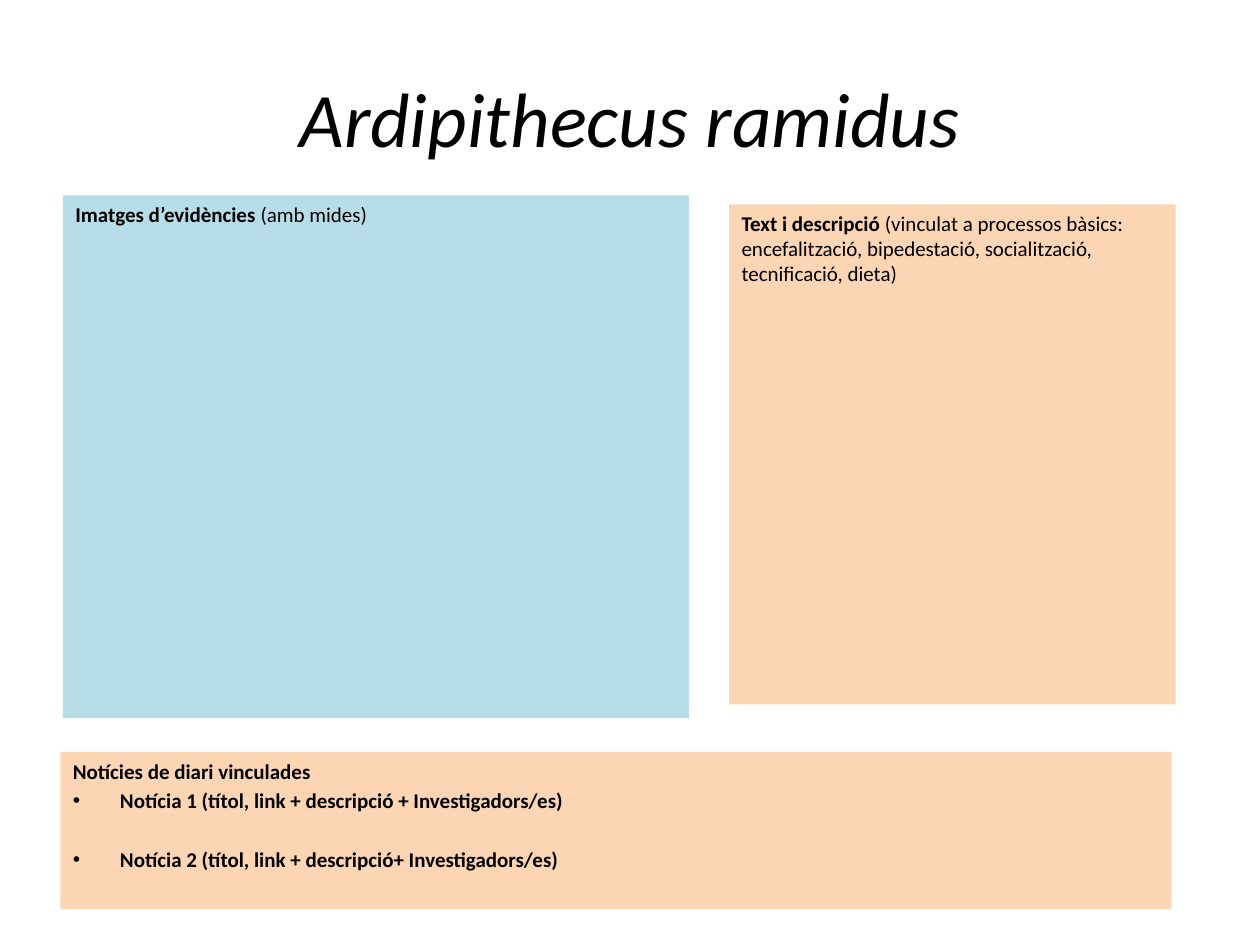
from lxml.etree import SubElement
from pptx import Presentation
from pptx.dml.color import RGBColor
from pptx.enum.shapes import MSO_SHAPE
from pptx.enum.text import MSO_ANCHOR, PP_ALIGN
from pptx.oxml.ns import qn
from pptx.util import Cm, Pt

BLACK = RGBColor(0x00, 0x00, 0x00)
LIGHT_BLUE = RGBColor(0xB7, 0xDE, 0xE8)
PEACH = RGBColor(0xFC, 0xD5, 0xB5)
FONT = "Calibri"
TITLE_ONLY = 5


def place(shape, left, top, width, height):
    shape.left, shape.top = Cm(left), Cm(top)
    shape.width, shape.height = Cm(width), Cm(height)


def style_font(paragraph, size):
    paragraph.font.name = FONT
    paragraph.font.size = Pt(size)
    paragraph.font.color.rgb = BLACK


def set_title(slide, species):
    title = slide.shapes.title
    place(title, 1.27, 0.76, 22.86, 3.18)
    title.text_frame.vertical_anchor = MSO_ANCHOR.MIDDLE
    heading = title.text_frame.paragraphs[0]
    heading.text = species
    heading.alignment = PP_ALIGN.CENTER
    style_font(heading, 44)
    heading.font.italic = True


def add_panel(slide, bounds, color, label, hint=""):
    """Add a filled box with a bold label and an optional plain hint; return its text frame."""
    panel = slide.shapes.add_shape(MSO_SHAPE.RECTANGLE, *map(Cm, bounds))
    panel.shadow.inherit = False
    panel.fill.solid()
    panel.fill.fore_color.rgb = color
    panel.line.fill.background()
    frame = panel.text_frame
    frame.word_wrap = True
    frame.vertical_anchor = MSO_ANCHOR.TOP
    heading = frame.paragraphs[0]
    heading.alignment = PP_ALIGN.LEFT
    style_font(heading, 12)
    for text, bold in ((label, True), (hint, False)):
        if text:
            run = heading.add_run()
            run.text = text
            run.font.bold = bold
    return frame


def add_bullet(frame, text, space_before):
    item = frame.add_paragraph()
    item.text = text
    item.alignment = PP_ALIGN.LEFT
    item.space_before = Pt(space_before)
    style_font(item, 12)
    item.font.bold = True
    properties = item._p.get_or_add_pPr()
    indent = Cm(0.95)
    properties.set("marL", str(indent))
    properties.set("indent", str(-indent))
    SubElement(properties, qn("a:buFont"), typeface="Arial")
    SubElement(properties, qn("a:buChar"), char="•")
    # The schema wants the default run properties after the bullet.
    properties.append(properties.find(qn("a:defRPr")))


def main():
    presentation = Presentation()
    presentation.slide_width, presentation.slide_height = Cm(25.4), Cm(19.05)
    slide = presentation.slides.add_slide(presentation.slide_layouts[TITLE_ONLY])

    set_title(slide, "Ardipithecus ramidus")
    add_panel(slide, (1.27, 3.94, 12.62, 10.54), LIGHT_BLUE,
              "Imatges d’evidències ", "(amb mides)")
    add_panel(slide, (14.7, 4.12, 9, 10.08), PEACH, "Text i descripció ",
              "(vinculat a processos bàsics: encefalització, bipedestació, "
              "socialització, tecnificació, dieta)")
    news = add_panel(slide, (1.22, 15.16, 22.4, 3.17), PEACH,
                     "Notícies de diari vinculades")
    add_bullet(news, "Notícia 1 (títol, link + descripció + Investigadors/es)", 2.4)
    add_bullet(news, "Notícia 2 (títol, link + descripció+ Investigadors/es)", 19.4)

    presentation.save("out.pptx")


if __name__ == "__main__":
    main()
